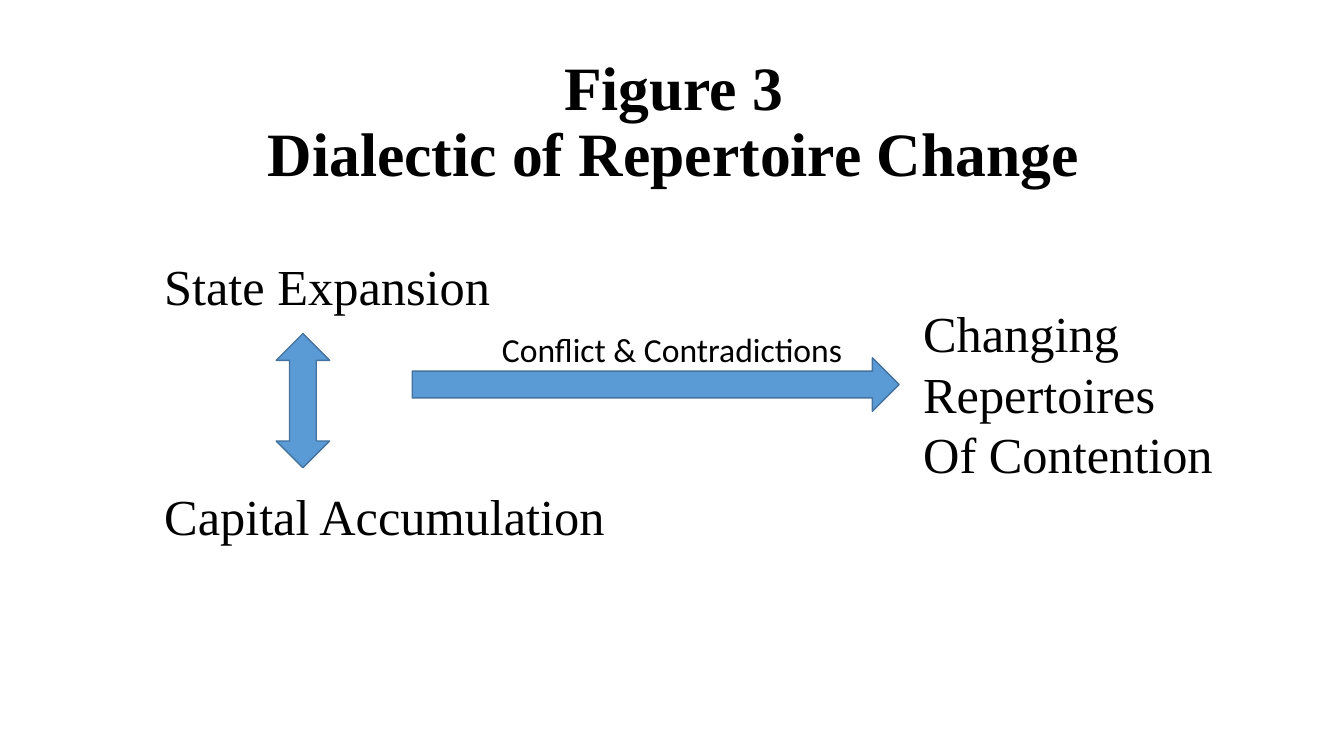
"""Build the Figure 3 slide on the dialectic of repertoire change."""
from dataclasses import dataclass

import pptx
import pptx.dml.color
import pptx.enum.shapes
import pptx.enum.text
import pptx.slide
import pptx.util

Pt = pptx.util.Pt
SHAPE = pptx.enum.shapes.MSO_SHAPE
ALIGN = pptx.enum.text.PP_ALIGN
ANCHOR = pptx.enum.text.MSO_ANCHOR
AUTO_SIZE = pptx.enum.text.MSO_AUTO_SIZE


@dataclass
class Label:
    left: float
    top: float
    width: float
    height: float
    lines: list[str]
    size: float = 36
    font: str = "Times New Roman"


@dataclass
class Arrow:
    left: float
    top: float
    width: float
    height: float
    kind: pptx.enum.shapes.MSO_SHAPE


TITLE = Label(175, 36, 612.7, 104.4, ["Figure 3", "Dialectic of Repertoire Change"], 44)
LABELS = [
    Label(110.2, 178.6, 249.8, 51.1, ["State Expansion"]),
    Label(652.3, 212.4, 223.9, 138.2, ["Changing", "Repertoires", "Of Contention"]),
    Label(110.2, 342.7, 332.6, 51.1, ["Capital Accumulation"]),
    Label(351.4, 231.1, 259.9, 36, ["Conflict & Contradictions"], 24, "Calibri"),
]
ARROWS = [
    Arrow(294.5, 255.6, 347.8, 38.2, SHAPE.RIGHT_ARROW),
    Arrow(197.3, 238.3, 38.2, 95.8, SHAPE.UP_DOWN_ARROW),
]


def color(value: str) -> pptx.dml.color.RGBColor:
    return pptx.dml.color.RGBColor.from_string(value)


def add_text_run(p, text: str, label: Label, bold: bool = False) -> None:
    r = p.add_run()
    r.text = text
    r.font.name = label.font
    r.font.size = Pt(label.size)
    r.font.bold = bold
    r.font.color.rgb = color("000000")


def add_box(s: pptx.slide.Slide, label: Label):
    sp = s.shapes.add_textbox(Pt(label.left), Pt(label.top), Pt(label.width), Pt(label.height))
    return sp.text_frame


def add_title(s: pptx.slide.Slide, title: Label) -> None:
    tf = add_box(s, title)
    tf.word_wrap = True
    tf.vertical_anchor = ANCHOR.MIDDLE
    p = tf.paragraphs[0]
    p.alignment = ALIGN.CENTER
    p.line_spacing = 0.9
    for i, line in enumerate(title.lines):
        if i:
            p.add_line_break()
        add_text_run(p, line, title, bold=True)


def add_label(s: pptx.slide.Slide, label: Label) -> None:
    tf = add_box(s, label)
    tf.word_wrap = False
    tf.auto_size = AUTO_SIZE.SHAPE_TO_FIT_TEXT
    for i, line in enumerate(label.lines):
        p = tf.add_paragraph() if i else tf.paragraphs[0]
        add_text_run(p, line, label)


def add_arrow(s: pptx.slide.Slide, arrow: Arrow) -> None:
    sp = s.shapes.add_shape(
        arrow.kind, Pt(arrow.left), Pt(arrow.top), Pt(arrow.width), Pt(arrow.height)
    )
    sp.shadow.inherit = False
    sp.fill.solid()
    sp.fill.fore_color.rgb = color("5B9BD5")
    sp.line.color.rgb = color("43739E")
    sp.line.width = Pt(1)


def main() -> None:
    prs = pptx.Presentation()
    prs.slide_width, prs.slide_height = Pt(960), Pt(540)
    s = prs.slides.add_slide(prs.slide_layouts[6])
    add_title(s, TITLE)
    for arrow in ARROWS:
        add_arrow(s, arrow)
    for label in LABELS:
        add_label(s, label)
    prs.save("out.pptx")


if __name__ == "__main__":
    main()
